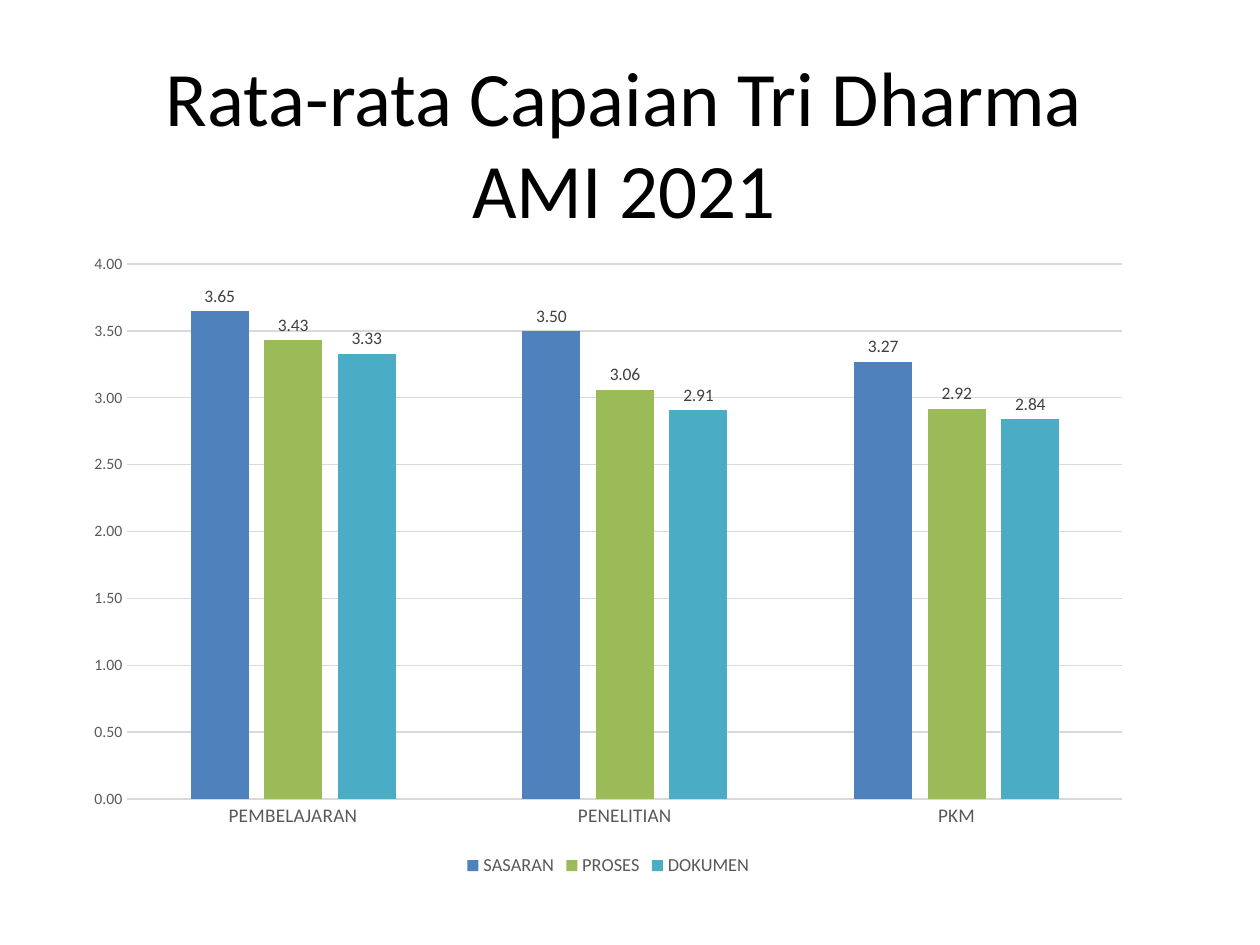
from pptx import Presentation
from pptx.chart.data import CategoryChartData
from pptx.dml.color import RGBColor
from pptx.enum.chart import XL_CHART_TYPE, XL_LABEL_POSITION, XL_LEGEND_POSITION, XL_TICK_MARK
from pptx.enum.text import MSO_ANCHOR, PP_ALIGN
from pptx.util import Cm, Pt

BLACK = RGBColor(0x00, 0x00, 0x00)
DARK_GREY = RGBColor(0x40, 0x40, 0x40)
GREY = RGBColor(0x59, 0x59, 0x59)
LIGHT_GREY = RGBColor(0xD9, 0xD9, 0xD9)
BLUE = RGBColor(0x4F, 0x81, 0xBD)
GREEN = RGBColor(0x9B, 0xBB, 0x59)
TEAL = RGBColor(0x4B, 0xAC, 0xC6)

FONT = "Calibri"
NUMBER_FORMAT = "0.00"
CATEGORIES = ["PEMBELAJARAN", "PENELITIAN", "PKM"]
SERIES = [
    ("SASARAN", [3.65, 3.50, 3.27], BLUE),
    ("PROSES", [3.43, 3.06, 2.92], GREEN),
    ("DOKUMEN", [3.33, 2.91, 2.84], TEAL),
]


def set_font(font, size, color):
    font.name = FONT
    font.size = Pt(size)
    font.bold = False
    font.color.rgb = color


def add_text(slide, text, left, top, width, height, size, color, align):
    text_box = slide.shapes.add_textbox(left, top, width, height)
    text_frame = text_box.text_frame
    text_frame.word_wrap = True
    text_frame.vertical_anchor = MSO_ANCHOR.TOP
    text_frame.margin_top = Cm(0.2)
    paragraph = text_frame.paragraphs[0]
    paragraph.alignment = align
    run = paragraph.add_run()
    run.text = text
    set_font(run.font, size, color)


presentation = Presentation()
presentation.slide_width = Cm(25.4)
presentation.slide_height = Cm(19.05)
slide = presentation.slides.add_slide(presentation.slide_layouts[6])

add_text(slide, "Rata-rata Capaian Tri Dharma AMI 2021",
         left=Cm(2.74), top=Cm(0.79), width=Cm(19.69), height=Cm(3.05),
         size=44, color=BLACK, align=PP_ALIGN.CENTER)

chart_data = CategoryChartData(number_format=NUMBER_FORMAT)
chart_data.categories = CATEGORIES
for name, values, color in SERIES:
    chart_data.add_series(name, values)

chart = slide.shapes.add_chart(
    XL_CHART_TYPE.COLUMN_CLUSTERED,
    Cm(1.47), Cm(4.88), Cm(21.59), Cm(12.9), chart_data,
).chart
chart.has_title = False
set_font(chart.font, 10, BLACK)

chart.has_legend = True
chart.legend.position = XL_LEGEND_POSITION.BOTTOM
chart.legend.include_in_layout = False
set_font(chart.legend.font, 10.5, GREY)

category_axis = chart.category_axis
category_axis.format.line.color.rgb = LIGHT_GREY
category_axis.format.line.width = Pt(0.75)

value_axis = chart.value_axis
value_axis.minimum_scale = 0
value_axis.maximum_scale = 4
value_axis.major_unit = 0.5
value_axis.format.line.fill.background()
value_axis.tick_labels.number_format = NUMBER_FORMAT
value_axis.tick_labels.number_format_is_linked = False
value_axis.major_gridlines.format.line.color.rgb = LIGHT_GREY
value_axis.major_gridlines.format.line.width = Pt(0.75)

for axis, size in ((category_axis, 11), (value_axis, 9)):
    axis.major_tick_mark = XL_TICK_MARK.NONE
    axis.minor_tick_mark = XL_TICK_MARK.NONE
    set_font(axis.tick_labels.font, size, GREY)

plot = chart.plots[0]
plot.gap_width = 219
plot.overlap = -27
plot.vary_by_categories = False

for series, (name, values, color) in zip(plot.series, SERIES):
    series.format.fill.solid()
    series.format.fill.fore_color.rgb = color
    labels = series.data_labels
    labels.show_value = True
    labels.position = XL_LABEL_POSITION.OUTSIDE_END
    labels.number_format = NUMBER_FORMAT
    labels.number_format_is_linked = False
    set_font(labels.font, 10, DARK_GREY)

presentation.save("out.pptx")
